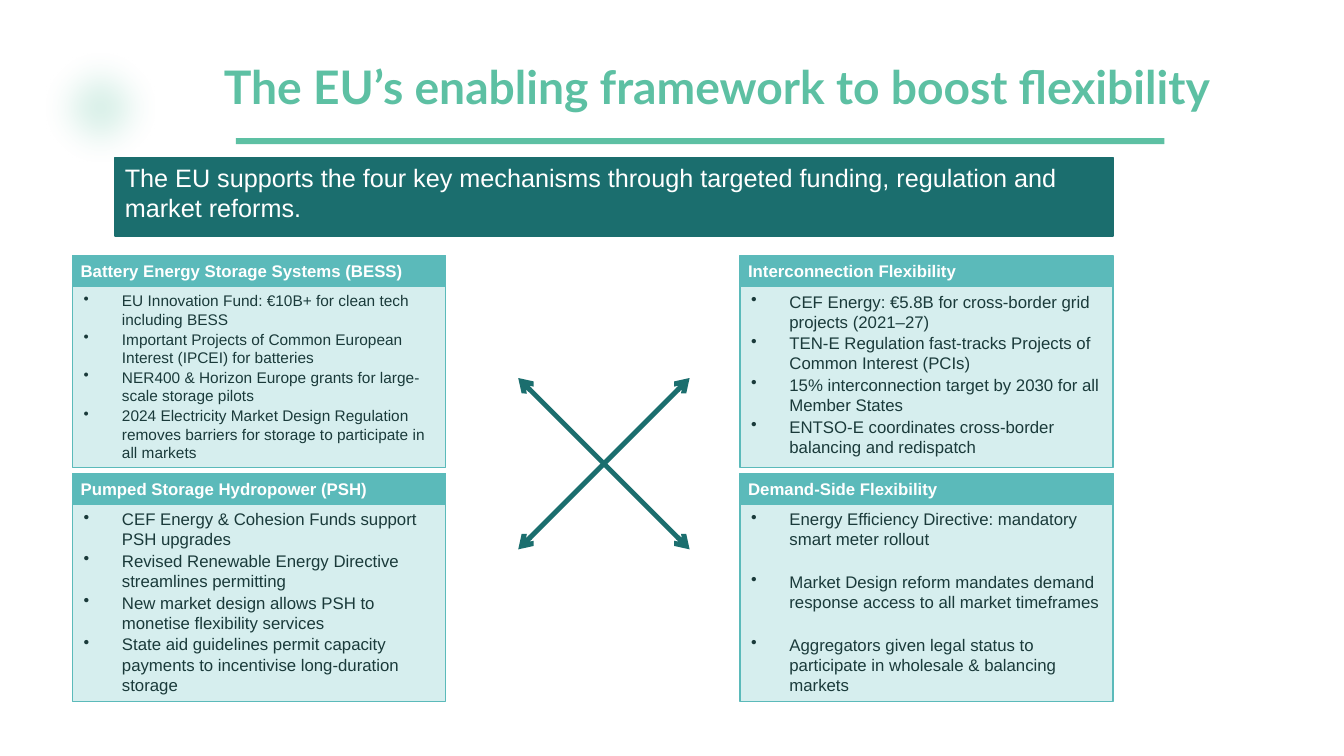
"""Builds the slide on the EU framework for power system flexibility."""
import lxml.etree
import pptx
import pptx.dml.color
import pptx.enum.shapes
import pptx.enum.text
import pptx.oxml.ns
import pptx.util

Inches = pptx.util.Inches
Pt = pptx.util.Pt
qn = pptx.oxml.ns.qn
SHAPES = pptx.enum.shapes.MSO_SHAPE
ANCHORS = pptx.enum.text.MSO_ANCHOR
COLORS = {
    "mint": "5DC0A3",
    "deep": "1B6E6E",
    "teal": "5BBABA",
    "pale": "D6EEEE",
    "ink": "1A3A3A",
    "white": "FFFFFF",
}


class SlideBuilder:
    """Holds the palette and the slide being drawn."""

    def __init__(self, page, colors):
        self.page = page
        self.colors = colors

    def color(self, name):
        return pptx.dml.color.RGBColor.from_string(self.colors[name])

    def shape(self, kind, left, top, width, height, fill, line=None, weight=1):
        shape = self.page.shapes.add_shape(
            kind, Inches(left), Inches(top), Inches(width), Inches(height))
        shape.shadow.inherit = False
        shape.fill.solid()
        shape.fill.fore_color.rgb = self.color(fill)
        if line:
            shape.line.color.rgb = self.color(line)
            shape.line.width = Pt(weight)
        else:
            shape.line.fill.background()
        return shape

    def glow(self, left, top, size, fill, alpha, softness):
        shape = self.shape(SHAPES.OVAL, left, top, size, size, fill)
        properties = shape._element.spPr
        tint = properties.find(qn("a:solidFill")).find(qn("a:srgbClr"))
        lxml.etree.SubElement(tint, qn("a:alpha"), val=str(alpha * 1000))
        effects = properties.find(qn("a:effectLst"))
        lxml.etree.SubElement(effects, qn("a:softEdge"), rad=str(Pt(softness)))

    def span(self, para, text, size, color, font="Arial", bold=False):
        span = para.add_run()
        span.text = text
        span.font.name = font
        span.font.size = Pt(size)
        span.font.bold = bold
        span.font.color.rgb = self.color(color)

    def text_box(self, left, top, width, height, inset, anchor):
        box = self.page.shapes.add_textbox(
            Inches(left), Inches(top), Inches(width), Inches(height))
        frame = box.text_frame
        frame.word_wrap = True
        frame.vertical_anchor = anchor
        frame.margin_left = frame.margin_right = Inches(inset)
        frame.margin_top = frame.margin_bottom = Inches(inset)
        return frame

    def label(self, left, top, width, height, text, size, color, font="Arial"):
        frame = self.text_box(left, top, width, height, 0, ANCHORS.MIDDLE)
        self.span(frame.paragraphs[0], text, size, color, font, bold=True)

    def banner(self, left, top, width, height, text):
        shape = self.shape(
            SHAPES.RECTANGLE, left, top, width, height, "deep", "deep")
        frame = shape.text_frame
        frame.word_wrap = True
        frame.vertical_anchor = ANCHORS.TOP
        para = frame.paragraphs[0]
        para.alignment = pptx.enum.text.PP_ALIGN.LEFT
        self.span(para, text, 18, "white")

    def bullets(self, left, top, width, height, items, size, gap):
        frame = self.text_box(left, top, width, height, 0.03, ANCHORS.TOP)
        for index, item in enumerate(items):
            para = frame.add_paragraph() if index else frame.paragraphs[0]
            properties = para._p.get_or_add_pPr()
            properties.set("marL", str(Inches(0.38)))
            properties.set("indent", str(-Inches(0.38)))
            lxml.etree.SubElement(properties, qn("a:buChar"), char="•")
            para.space_after = Pt(gap)
            self.span(para, item, size, "ink")

    def card(self, left, top, height, title, items, size=12, gap=1):
        width, header, pad = 3.7, 0.3, 0.08
        inner = width - 2 * pad
        self.shape(SHAPES.RECTANGLE, left, top, width, height,
                   "pale", "teal", 1.2)
        self.shape(SHAPES.RECTANGLE, left, top, width, header, "teal", "teal")
        self.label(left + pad, top, inner, header, title, 12, "white")
        self.bullets(left + pad, top + header + 0.02, inner,
                     height - header - 0.06, items, size, gap)

    def double_arrow(self, start, end):
        arrow = self.page.shapes.add_connector(
            pptx.enum.shapes.MSO_CONNECTOR.STRAIGHT,
            *[Inches(value) for value in (*start, *end)])
        arrow.line.color.rgb = self.color("deep")
        arrow.line.width = Pt(3.5)
        outline = arrow.line._get_or_add_ln()
        for tag in ("a:headEnd", "a:tailEnd"):
            lxml.etree.SubElement(outline, qn(tag), type="arrow")
        lxml.etree.SubElement(arrow._element.spPr, qn("a:effectLst"))


def main():
    deck = pptx.Presentation()
    deck.slide_width = Inches(13.33)
    deck.slide_height = Inches(7.5)
    page = deck.slides.add_slide(deck.slide_layouts[6])
    builder = SlideBuilder(page, COLORS)

    builder.glow(0.24, 0.31, 1.51, "mint", 25, 25)
    builder.shape(SHAPES.RECTANGLE, 2.34, 1.37, 9.21, 0.06, "mint")
    builder.label(2.22, 0.64, 9.95, 0.42,
                  "The EU’s enabling framework to boost flexibility",
                  33, "mint", "Lato")
    builder.banner(1.14, 1.56, 9.9, 0.78,
                   "The EU supports the four key mechanisms through targeted "
                   "funding, regulation and market reforms.")

    left, right = 0.72, 7.34
    upper, lower = (2.54, 2.1), (4.7, 2.26)
    builder.card(left, *upper, "Battery Energy Storage Systems (BESS)", [
        "EU Innovation Fund: €10B+ for clean tech including BESS",
        "Important Projects of Common European Interest (IPCEI) for batteries",
        "NER400 & Horizon Europe grants for large-scale storage pilots",
        "2024 Electricity Market Design Regulation removes barriers for "
        "storage to participate in all markets",
    ], size=11)
    builder.card(left, *lower, "Pumped Storage Hydropower (PSH)", [
        "CEF Energy & Cohesion Funds support PSH upgrades",
        "Revised Renewable Energy Directive streamlines permitting",
        "New market design allows PSH to monetise flexibility services",
        "State aid guidelines permit capacity payments to incentivise "
        "long-duration storage",
    ])
    builder.card(right, *upper, "Interconnection Flexibility", [
        "CEF Energy: €5.8B for cross-border grid projects (2021–27)",
        "TEN-E Regulation fast-tracks Projects of Common Interest (PCIs)",
        "15% interconnection target by 2030 for all Member States",
        "ENTSO-E coordinates cross-border balancing and redispatch",
    ])
    builder.card(right, *lower, "Demand-Side Flexibility", [
        "Energy Efficiency Directive: mandatory smart meter rollout",
        "Market Design reform mandates demand response access to all "
        "market timeframes",
        "Aggregators given legal status to participate in wholesale & "
        "balancing markets",
    ], gap=16)

    west, east, north, south = 5.14, 6.84, 3.75, 5.45
    builder.double_arrow((west, north), (east, south))
    builder.double_arrow((east, north), (west, south))
    deck.save("out.pptx")


if __name__ == "__main__":
    main()
